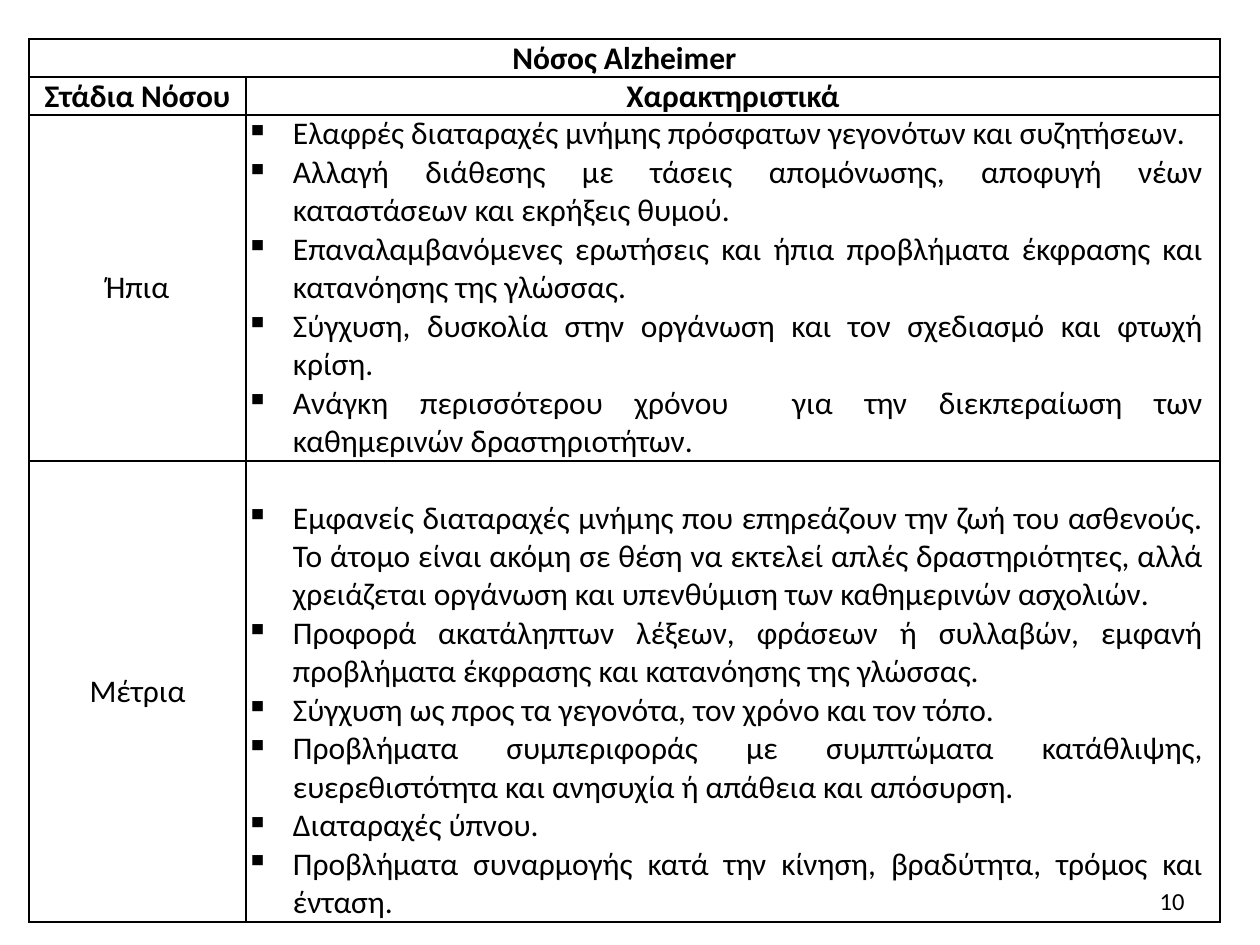
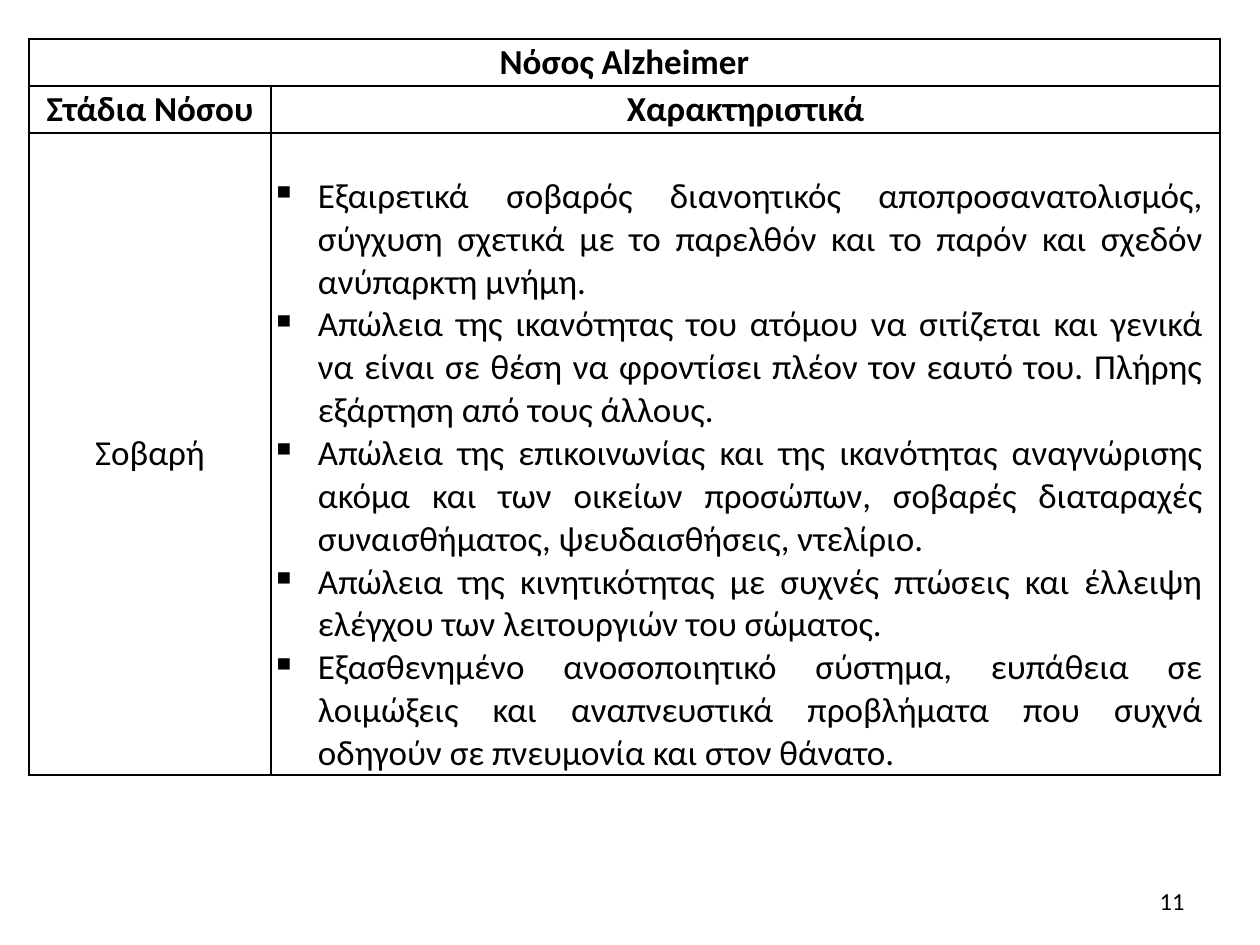
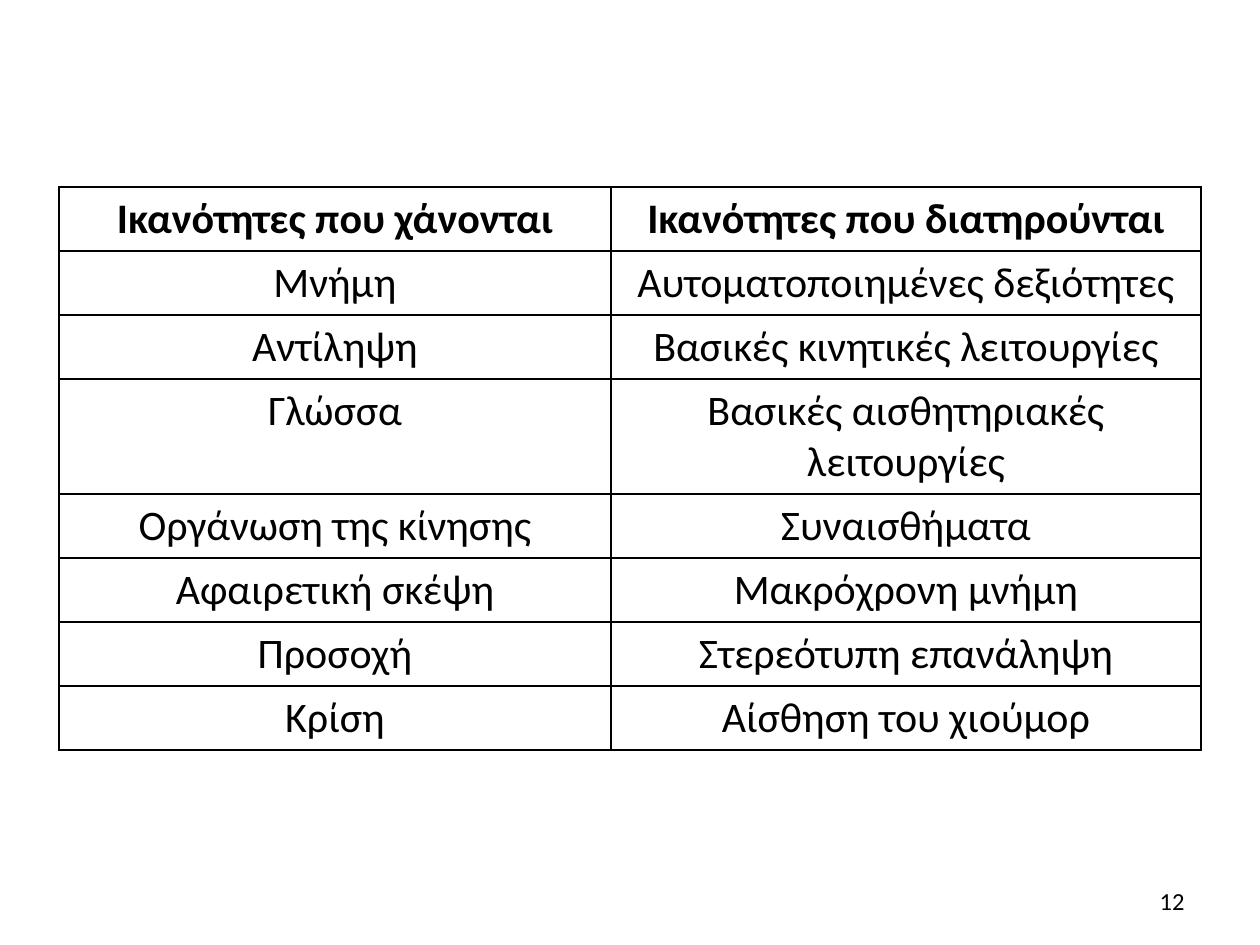
from lxml.etree import SubElement
from pptx import Presentation
from pptx.dml.color import RGBColor
from pptx.enum.text import MSO_ANCHOR, PP_ALIGN
from pptx.oxml.ns import qn
from pptx.util import Pt

EMU_PER_PX = 914400 / 126
FONT = "Calibri"
BLACK = "000000"
LIST_INDENT = 47
LIST_RIGHT_MARGIN = 17


def px(length):
    return round(length * EMU_PER_PX)


def style(paragraph, size, align, bold=False):
    paragraph.alignment = align
    paragraph.font.name = FONT
    paragraph.font.size = Pt(size)
    paragraph.font.bold = bold
    paragraph.font.color.rgb = RGBColor.from_string(BLACK)


disease_headers = [["Νόσος Alzheimer", ""], ["Στάδια Νόσου", "Χαρακτηριστικά"]]

mild = [
    "Ελαφρές διαταραχές μνήμης πρόσφατων γεγονότων και συζητήσεων.",
    "Αλλαγή διάθεσης με τάσεις απομόνωσης, αποφυγή νέων καταστάσεων και εκρήξεις θυμού.",
    "Επαναλαμβανόμενες ερωτήσεις και ήπια προβλήματα έκφρασης και κατανόησης της γλώσσας.",
    "Σύγχυση, δυσκολία στην οργάνωση και τον σχεδιασμό και φτωχή κρίση.",
    "Ανάγκη περισσότερου χρόνου  για την διεκπεραίωση των καθημερινών δραστηριοτήτων.",
]
moderate = [
    "Εμφανείς διαταραχές μνήμης που επηρεάζουν την ζωή του ασθενούς. Το άτομο είναι ακόμη "
    "σε θέση να εκτελεί απλές δραστηριότητες, αλλά χρειάζεται οργάνωση και υπενθύμιση των "
    "καθημερινών ασχολιών.",
    "Προφορά ακατάληπτων λέξεων, φράσεων ή συλλαβών, εμφανή προβλήματα έκφρασης και "
    "κατανόησης της γλώσσας.",
    "Σύγχυση ως προς τα γεγονότα, τον χρόνο και τον τόπο.",
    "Προβλήματα συμπεριφοράς με συμπτώματα κατάθλιψης, ευερεθιστότητα και ανησυχία ή "
    "απάθεια και απόσυρση.",
    "Διαταραχές ύπνου.",
    "Προβλήματα συναρμογής κατά την κίνηση, βραδύτητα, τρόμος και ένταση.",
]
severe = [
    "Εξαιρετικά σοβαρός διανοητικός αποπροσανατολισμός, σύγχυση σχετικά με το παρελθόν "
    "και το παρόν και σχεδόν ανύπαρκτη μνήμη.",
    "Απώλεια της ικανότητας του ατόμου να σιτίζεται και γενικά να είναι σε θέση να "
    "φροντίσει πλέον τον εαυτό του. Πλήρης εξάρτηση από τους άλλους.",
    "Απώλεια της επικοινωνίας και της ικανότητας αναγνώρισης ακόμα και των οικείων "
    "προσώπων, σοβαρές διαταραχές συναισθήματος, ψευδαισθήσεις, ντελίριο.",
    "Απώλεια της κινητικότητας με συχνές πτώσεις και έλλειψη ελέγχου των λειτουργιών "
    "του σώματος.",
    "Εξασθενημένο ανοσοποιητικό σύστημα, ευπάθεια σε λοιμώξεις και αναπνευστικά "
    "προβλήματα που συχνά οδηγούν σε πνευμονία και στον θάνατο.",
]
abilities = [
    ["Ικανότητες που χάνονται", "Ικανότητες που διατηρούνται"],
    ["Μνήμη", "Αυτοματοποιημένες δεξιότητες"],
    ["Αντίληψη", "Βασικές κινητικές λειτουργίες"],
    ["Γλώσσα", "Βασικές αισθητηριακές λειτουργίες"],
    ["Οργάνωση της κίνησης", "Συναισθήματα"],
    ["Αφαιρετική σκέψη", "Μακρόχρονη μνήμη"],
    ["Προσοχή", "Στερεότυπη επανάληψη"],
    ["Κρίση", "Αίσθηση του χιούμορ"],
]

# number, left, top, column widths, row heights, text size, header rows, rows
pages = [
    (10, 29, 39, [217, 974], [38, 38, 346, 461], 18, 2,
     disease_headers + [["Ήπια", mild], ["Μέτρια", moderate]]),
    (11, 29, 39, [242, 949], [47, 47, 642], 20, 2,
     disease_headers + [["Σοβαρή", severe]]),
    (12, 59, 187, [552, 590], [64, 64, 64, 115, 64, 64, 64, 64], 24, 1, abilities),
]
line_above = {"Μέτρια": 38, "Σοβαρή": 42}

deck = Presentation()
deck.slide_width = px(1260)
deck.slide_height = px(945)

for number, left, top, widths, heights, size, header_rows, rows in pages:
    page = deck.slides.add_slide(deck.slide_layouts[6])

    box = page.shapes.add_textbox(px(903), px(876), px(294), px(50))
    box.text_frame.word_wrap = True
    box.text_frame.vertical_anchor = MSO_ANCHOR.MIDDLE
    box.text_frame.text = str(number)
    style(box.text_frame.paragraphs[0], 14, PP_ALIGN.RIGHT)

    table = page.shapes.add_table(len(rows), 2, px(left), px(top),
                                  px(sum(widths)), px(sum(heights))).table
    table.first_row = table.horz_banding = False
    for column, width in zip(table.columns, widths):
        column.width = px(width)

    is_stage_table = rows is not abilities
    for row_index, (row, height) in enumerate(zip(rows, heights)):
        table.rows[row_index].height = px(height)
        for column_index, content in enumerate(row):
            cell = table.cell(row_index, column_index)
            properties = cell._tc.get_or_add_tcPr()
            for side in ("a:lnL", "a:lnR", "a:lnT", "a:lnB"):
                border = SubElement(properties, qn(side), w=str(Pt(1)))
                line_fill = SubElement(border, qn("a:solidFill"))
                SubElement(line_fill, qn("a:srgbClr"), val=BLACK)
            cell.fill.background()
            if is_stage_table:
                cell.vertical_anchor = MSO_ANCHOR.MIDDLE
                cell.margin_left = cell.margin_right = 0
                cell.margin_top = cell.margin_bottom = 0

            if isinstance(content, str):
                cell.text = content
                style(cell.text_frame.paragraphs[0], size, PP_ALIGN.CENTER,
                      row_index < header_rows)
                continue

            cell.margin_right = px(LIST_RIGHT_MARGIN)
            cell.margin_top = px(line_above.get(row[0], 0))
            cell.text = "\n".join(content)
            for paragraph in cell.text_frame.paragraphs:
                layout = paragraph._p.get_or_add_pPr()
                layout.set("marL", str(px(LIST_INDENT)))
                layout.set("indent", str(-px(LIST_INDENT)))
                SubElement(layout, qn("a:buChar"), char="▪")
                style(paragraph, size, PP_ALIGN.JUSTIFY)

    if is_stage_table:
        table.cell(0, 0).merge(table.cell(0, 1))

deck.save("out.pptx")
